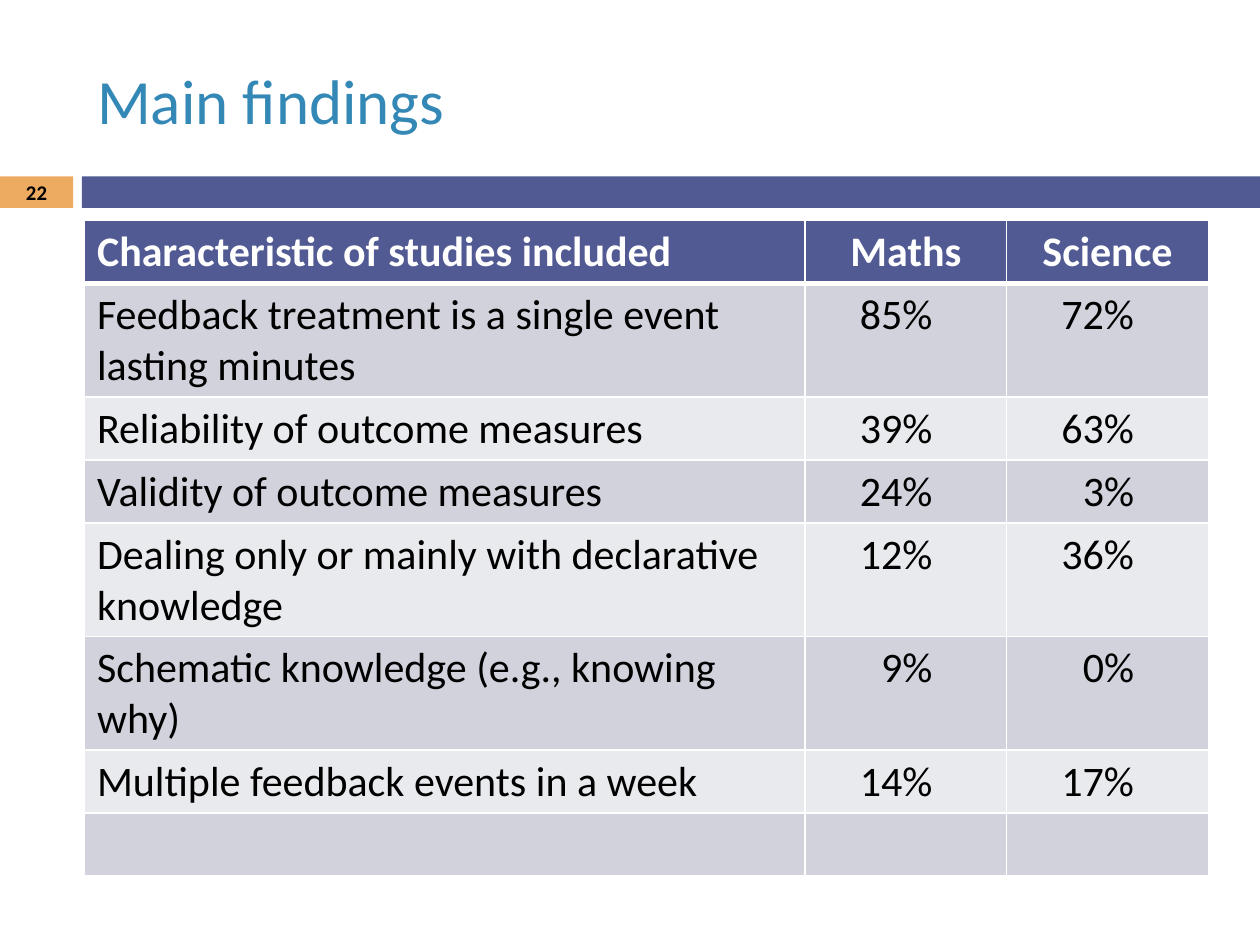
from lxml.etree import SubElement
from pptx import Presentation
from pptx.dml.color import RGBColor
from pptx.enum.shapes import MSO_SHAPE as Shape
from pptx.enum.text import MSO_ANCHOR as Anchor, PP_ALIGN as Align
from pptx.oxml import parse_xml
from pptx.oxml.ns import nsdecls, qn
from pptx.util import Inches, Pt

# Content
TITLE = "Main findings"
NUMBER = "22"
HEADER = ("Characteristic of studies included", "Maths", "Science")
FINDINGS = [
    ("Feedback treatment is a single event lasting minutes", "85%", "72%"),
    ("Reliability of outcome measures", "39%", "63%"),
    ("Validity of outcome measures", "24%", "3%"),
    ("Dealing only or mainly with declarative knowledge", "12%", "36%"),
    ("Schematic knowledge (e.g., knowing why)", "9%", "0%"),
    ("Multiple feedback events in a week", "14%", "17%"),
    ("", "", ""),
]

# Style and layout
COLORS = {"title": "3488B6", "bar": "525A93", "tab": "EDAA61", "text": "000000",
          "white": "FFFFFF", "odd": "D1D2DC", "even": "E9EAEE"}
FONT = "Calibri"
TABLE_SIZE = 24
WIDTH, HEIGHT = 10, 7.5
LEFT, CONTENT_WIDTH = 0.67, 8.92
BAR_TOP, BAR_HEIGHT = 1.4, 0.25
TAB_WIDTH, BAR_LEFT = 0.58, 0.65
TABLE_TOP, ROW_HEIGHT = 1.75, 0.405
VALUE_WIDTH, VALUE_INSET = 1.6, 0.59
COLUMNS = (CONTENT_WIDTH - 2 * VALUE_WIDTH, VALUE_WIDTH, VALUE_WIDTH)


def color(name):
    return RGBColor.from_string(COLORS[name])


def write(frame, text, size, ink, align=Align.LEFT, bold=False):
    para = frame.paragraphs[0]
    para.alignment = align
    if not text:  # an empty line keeps the height of its text size
        SubElement(para._p, qn("a:endParaRPr"), sz=str(size * 100))
        return
    span = para.add_run()
    span.text = text
    span.font.name, span.font.size, span.font.bold = FONT, Pt(size), bold
    span.font.color.rgb = color(ink)


def add_band(page, left, width, fill):
    band = page.shapes.add_shape(Shape.RECTANGLE, Inches(left), Inches(BAR_TOP),
                                 Inches(width), Inches(BAR_HEIGHT))
    band.shadow.inherit = False
    band.fill.solid()
    band.fill.fore_color.rgb = color(fill)
    band.line.fill.background()


def set_borders(cell, widths):
    for index, (side, points) in enumerate(widths.items()):
        cell._tc.get_or_add_tcPr().insert(index, parse_xml(
            f'<a:ln{side} {nsdecls("a")} w="{Pt(points)}"><a:solidFill>'
            f'<a:srgbClr val="{COLORS["white"]}"/></a:solidFill></a:ln{side}>'))


def add_findings(page):
    rows = [HEADER, *FINDINGS]
    table = page.shapes.add_table(
        len(rows), len(COLUMNS), Inches(LEFT), Inches(TABLE_TOP),
        Inches(CONTENT_WIDTH), Inches(ROW_HEIGHT * len(rows))).table
    table.horz_banding = False
    for column, width in zip(table.columns, COLUMNS):
        column.width = Inches(width)
    for r, row in enumerate(rows):
        table.rows[r].height = Inches(ROW_HEIGHT)
        is_header = r == 0
        fill = "bar" if is_header else "odd" if r % 2 else "even"
        for c, text in enumerate(row):
            cell = table.cell(r, c)
            cell.fill.solid()
            cell.fill.fore_color.rgb = color(fill)
            align = Align.LEFT
            if c:
                align = Align.CENTER if is_header else Align.RIGHT
                if text and not is_header:
                    cell.margin_right = Inches(VALUE_INSET)
            write(cell.text_frame, text, TABLE_SIZE,
                  "white" if is_header else "text", align, is_header)
            set_borders(cell, {"L": 1, "R": 1, "T": 3 if r == 1 else 1,
                               "B": 3 if is_header else 1})


def main():
    deck = Presentation()
    deck.slide_width, deck.slide_height = Inches(WIDTH), Inches(HEIGHT)
    page = deck.slides.add_slide(deck.slide_layouts[5])

    # Bar with the page number tab
    add_band(page, 0, TAB_WIDTH, "tab")
    add_band(page, BAR_LEFT, WIDTH - BAR_LEFT, "bar")

    # Title
    title = page.shapes.title
    title.left, title.top = Inches(LEFT), Inches(0.25)
    title.width, title.height = Inches(CONTENT_WIDTH), Inches(1.08)
    title.text_frame.vertical_anchor = Anchor.MIDDLE
    write(title.text_frame, TITLE, 36, "title")

    # Page number
    box = page.shapes.add_textbox(0, Inches(1.39), Inches(TAB_WIDTH), Inches(0.27))
    frame = box.text_frame
    frame.word_wrap = True
    frame.vertical_anchor = Anchor.MIDDLE
    frame.margin_top = frame.margin_bottom = 0
    write(frame, NUMBER, 11.9, "text", Align.CENTER, True)

    add_findings(page)
    deck.save("out.pptx")


if __name__ == "__main__":
    main()
